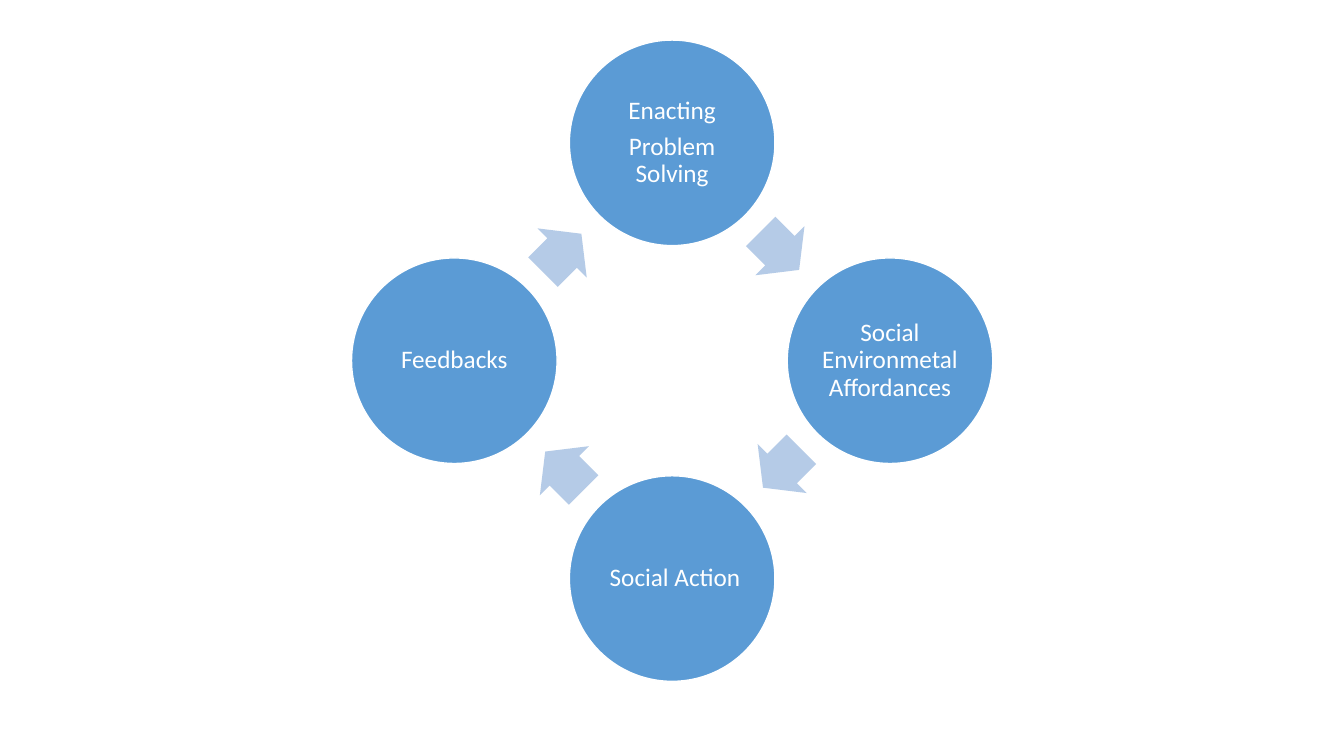
from math import cos, radians, sin

from pptx import Presentation
from pptx.dml.color import RGBColor
from pptx.enum.shapes import MSO_SHAPE
from pptx.enum.text import MSO_ANCHOR, PP_ALIGN
from pptx.util import Cm, Pt

STAGES = [
    ["Enacting", "Problem Solving"],
    ["Social Environmetal Affordances"],
    [" Social Action"],
    ["Feedbacks"],
]
CENTER_X, CENTER_Y = 16.94, 9.09
RING, DIAMETER = 5.49, 5.18
ARROW_RING, ARROW_SETBACK = 3.88, 0.04
ARROW_W, ARROW_H = 1.37, 1.75
BLUE, PALE_BLUE, WHITE = "5B9BD5", "B5CBE7", "FFFFFF"

FRAME = dict(word_wrap=True, vertical_anchor=MSO_ANCHOR.MIDDLE,
             margin_left=Cm(0.08), margin_right=Cm(0.08),
             margin_top=Cm(0.08), margin_bottom=Cm(0.08))
PARAGRAPH = dict(alignment=PP_ALIGN.CENTER, line_spacing=0.9,
                 space_before=Pt(0), space_after=Pt(6.3))
FONT = dict(name="Calibri", size=Pt(18))


def color(hex_value):
    return RGBColor.from_string(hex_value)


def apply(target, values):
    for name, value in values.items():
        setattr(target, name, value)


def add_centered(s, kind, x, y, w, h, fill):
    sp = s.shapes.add_shape(kind, Cm(x - w / 2), Cm(y - h / 2), Cm(w), Cm(h))
    sp.shadow.inherit = False
    sp.fill.solid()
    sp.fill.fore_color.rgb = color(fill)
    return sp


def add_stage(s, angle, lines):
    x = CENTER_X + RING * sin(angle)
    y = CENTER_Y - RING * cos(angle)
    sp = add_centered(s, MSO_SHAPE.OVAL, x, y, DIAMETER, DIAMETER, BLUE)
    sp.line.color.rgb = color(WHITE)
    sp.line.width = Pt(1)
    tf = sp.text_frame
    apply(tf, FRAME)
    for i, line in enumerate(lines):
        p = tf.add_paragraph() if i else tf.paragraphs[0]
        apply(p, PARAGRAPH)
        r = p.add_run()
        r.text = line
        apply(r.font, FONT)
        r.font.color.rgb = color(WHITE)


def add_arrow(s, degrees):
    angle = radians(degrees)
    x = CENTER_X + ARROW_RING * sin(angle) - ARROW_SETBACK * cos(angle)
    y = CENTER_Y - ARROW_RING * cos(angle) - ARROW_SETBACK * sin(angle)
    sp = add_centered(s, MSO_SHAPE.RIGHT_ARROW, x, y, ARROW_W, ARROW_H, PALE_BLUE)
    sp.line.fill.background()
    sp.adjustments[0] = 0.6
    sp.adjustments[1] = 0.5
    sp.rotation = degrees


def main():
    prs = Presentation()
    prs.slide_width, prs.slide_height = Cm(33.87), Cm(19.05)
    s = prs.slides.add_slide(prs.slide_layouts[6])
    step = 360 / len(STAGES)
    for i, lines in enumerate(STAGES):
        add_stage(s, radians(i * step), lines)
        add_arrow(s, (i + 0.5) * step)
    prs.save("out.pptx")


if __name__ == "__main__":
    main()
